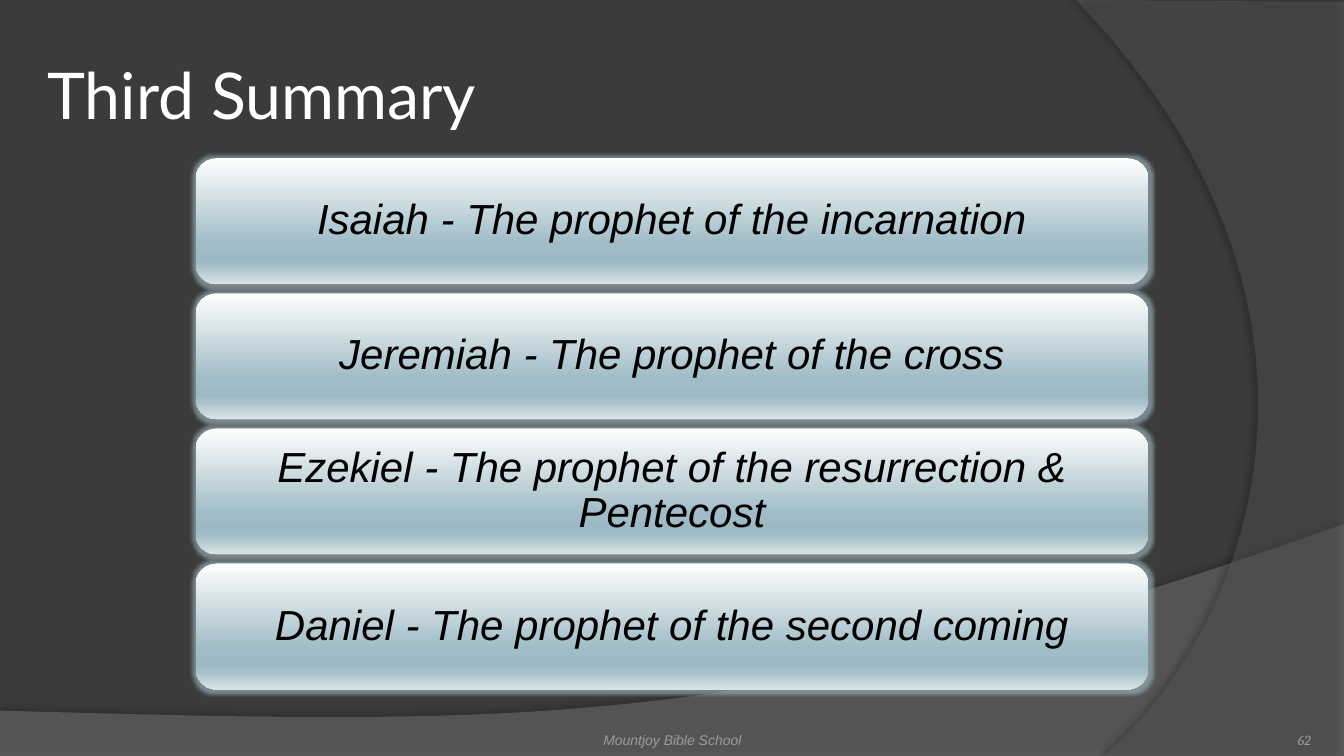
from lxml.etree import SubElement
from pptx import Presentation
from pptx.dml.color import RGBColor
from pptx.enum.shapes import MSO_SHAPE
from pptx.enum.text import MSO_ANCHOR as Anchor, PP_ALIGN as Align
from pptx.oxml.ns import qn
from pptx.util import Inches, Pt

BACKGROUND = RGBColor(0x3B, 0x3B, 0x3B)
WAVE_GREY = RGBColor(0x7F, 0x7F, 0x7F)
ARC_GREY = RGBColor(0x5E, 0x5E, 0x5E)
FOOTER_GREY = RGBColor(0x9C, 0x9B, 0x99)
WHITE = RGBColor(0xFF, 0xFF, 0xFF)
BLACK = RGBColor(0x00, 0x00, 0x00)
GLOW = RGBColor(0xA0, 0xBC, 0xC6)
CARD_STOPS = [
    (0, RGBColor(0xFE, 0xFE, 0xFE)),
    (68, RGBColor(0xA0, 0xBC, 0xC6)),
    (81, RGBColor(0x9C, 0xB9, 0xC4)),
    (86, RGBColor(0xA7, 0xC0, 0xC9)),
    (100, RGBColor(0xDA, 0xE4, 0xE7)),
]

PROPHETS = [
    "Isaiah - The prophet of the incarnation",
    "Jeremiah - The prophet of the cross",
    "Ezekiel - The prophet of the resurrection & Pentecost",
    "Daniel - The prophet of the second coming",
]


def add_color(parent, color, alpha=100):
    """Append an RGB colour with an opacity in percent."""
    element = SubElement(parent, qn("a:srgbClr"), val=str(color))
    if alpha < 100:
        SubElement(element, qn("a:alpha"), val=str(alpha * 1000))


def curve_points(start, control_1, control_2, end, steps=60):
    """Points along a cubic curve, without its start."""
    corners = (start, control_1, control_2, end)
    for step in range(1, steps + 1):
        t = step / steps
        weights = ((1 - t) ** 3, 3 * t * (1 - t) ** 2, 3 * t * t * (1 - t), t ** 3)
        yield tuple(sum(w * c[axis] for w, c in zip(weights, corners)) for axis in (0, 1))


class SlideBuilder:
    """Places elements by percentages of the slide's width and height."""

    def __init__(self, presentation):
        self.width = presentation.slide_width
        self.height = presentation.slide_height
        self.slide = presentation.slides.add_slide(presentation.slide_layouts[5])
        self.slide.background.fill.solid()
        self.slide.background.fill.fore_color.rgb = BACKGROUND

    def point(self, x, y):
        return round(self.width * x / 100), round(self.height * y / 100)

    def box(self, left, top, width, height):
        return *self.point(left, top), *self.point(width, height)

    def set_text(self, shape, text, font, size, color, align, anchor, insets, italic=False):
        frame = shape.text_frame
        frame.word_wrap = True
        frame.vertical_anchor = anchor
        frame.margin_left = frame.margin_right = Inches(insets[0])
        frame.margin_top, frame.margin_bottom = Inches(insets[1]), Inches(insets[2])
        frame.text = text
        paragraph = frame.paragraphs[0]
        paragraph.alignment = align
        paragraph.font.name, paragraph.font.size = font, Pt(size)
        paragraph.font.italic = italic
        paragraph.font.color.rgb = color
        return paragraph

    def title(self, text, box):
        shape = self.slide.shapes.title
        shape.left, shape.top, shape.width, shape.height = self.box(*box)
        self.set_text(shape, text, "Lato", 46, WHITE, Align.LEFT, Anchor.MIDDLE,
                      (0.1, 0.05, 0.05))

    def backdrop(self, corners, curve, color, alpha, shadow_alpha, distance, direction):
        points = [self.point(*p) for p in [*corners, *curve_points(corners[-1], *curve)]]
        builder = self.slide.shapes.build_freeform(*points[0])
        builder.add_line_segments(points[1:], close=True)
        shape = builder.convert_to_shape()
        shape.line.fill.background()
        shape.fill.solid()
        shape.fill.fore_color.rgb = color
        fill_color = shape._element.spPr.find(qn("a:solidFill")).find(qn("a:srgbClr"))
        SubElement(fill_color, qn("a:alpha"), val=str(alpha * 1000))
        shape.shadow.inherit = False
        effects = shape._element.spPr.find(qn("a:effectLst"))
        shadow = SubElement(effects, qn("a:outerShdw"), blurRad=str(Pt(4)),
                            dist=str(Pt(distance)), dir=str(direction * 60000))
        add_color(shadow, BLACK, shadow_alpha)
        # Keep the backdrop behind the title
        self.slide.shapes.title._element.addprevious(shape._element)

    def card(self, text, box):
        shape = self.slide.shapes.add_shape(MSO_SHAPE.ROUNDED_RECTANGLE, *self.box(*box))
        shape.line.fill.background()
        shape.fill.gradient()
        shape.fill.gradient_angle = 270
        stops = shape._element.spPr.find(qn("a:gradFill")).find(qn("a:gsLst"))
        stops.clear()
        for position, color in CARD_STOPS:
            add_color(SubElement(stops, qn("a:gs"), pos=str(position * 1000)), color)
        shape.shadow.inherit = False
        effects = shape._element.spPr.find(qn("a:effectLst"))
        add_color(SubElement(effects, qn("a:glow"), rad=str(Pt(5))), GLOW, 60)
        paragraph = self.set_text(shape, text, "Arial", 30, BLACK, Align.CENTER,
                                  Anchor.MIDDLE, (0.18, 0.18, 0.18), italic=True)
        paragraph.line_spacing = 0.9

    def footer(self, text, box, font, align, top_inset=0):
        shape = self.slide.shapes.add_textbox(*self.box(*box))
        self.set_text(shape, text, font, 10, FOOTER_GREY, align, Anchor.BOTTOM,
                      (0, top_inset, 0), italic=True)


def main():
    presentation = Presentation()
    presentation.slide_width, presentation.slide_height = Inches(13.33), Inches(7.5)
    page = SlideBuilder(presentation)

    # Backdrop: wave along the bottom, arc on the right
    page.backdrop([(0, 94), (0, 100), (100, 100), (100, 69.33)],
                  [(55.89, 97.2), (39.08, 95.87), (0, 94)],
                  WAVE_GREY, 45, 35, 3.5, 270)
    page.backdrop([(100, 0.27), (100, 100), (82.15, 100)],
                  [(93.47, 82.53), (101.8, 40), (80.05, 0)],
                  ARC_GREY, 40, 45, 4, 180)

    page.title("Third Summary", (2.78, 4, 94.5, 16.67))

    # One card per prophet
    for row, text in enumerate(PROPHETS):
        page.card(text, (14.55, 20.93 + 17.87 * row, 70.9, 16.67))

    # Footer and slide number
    page.footer("62", (89.2, 93.6, 8.33, 5.33), "Cambria", Align.RIGHT)
    page.footer("Mountjoy Bible School", (34.2, 93.6, 31.65, 5.33), "Arial", Align.CENTER, 0.05)

    presentation.save("out.pptx")


if __name__ == "__main__":
    main()
